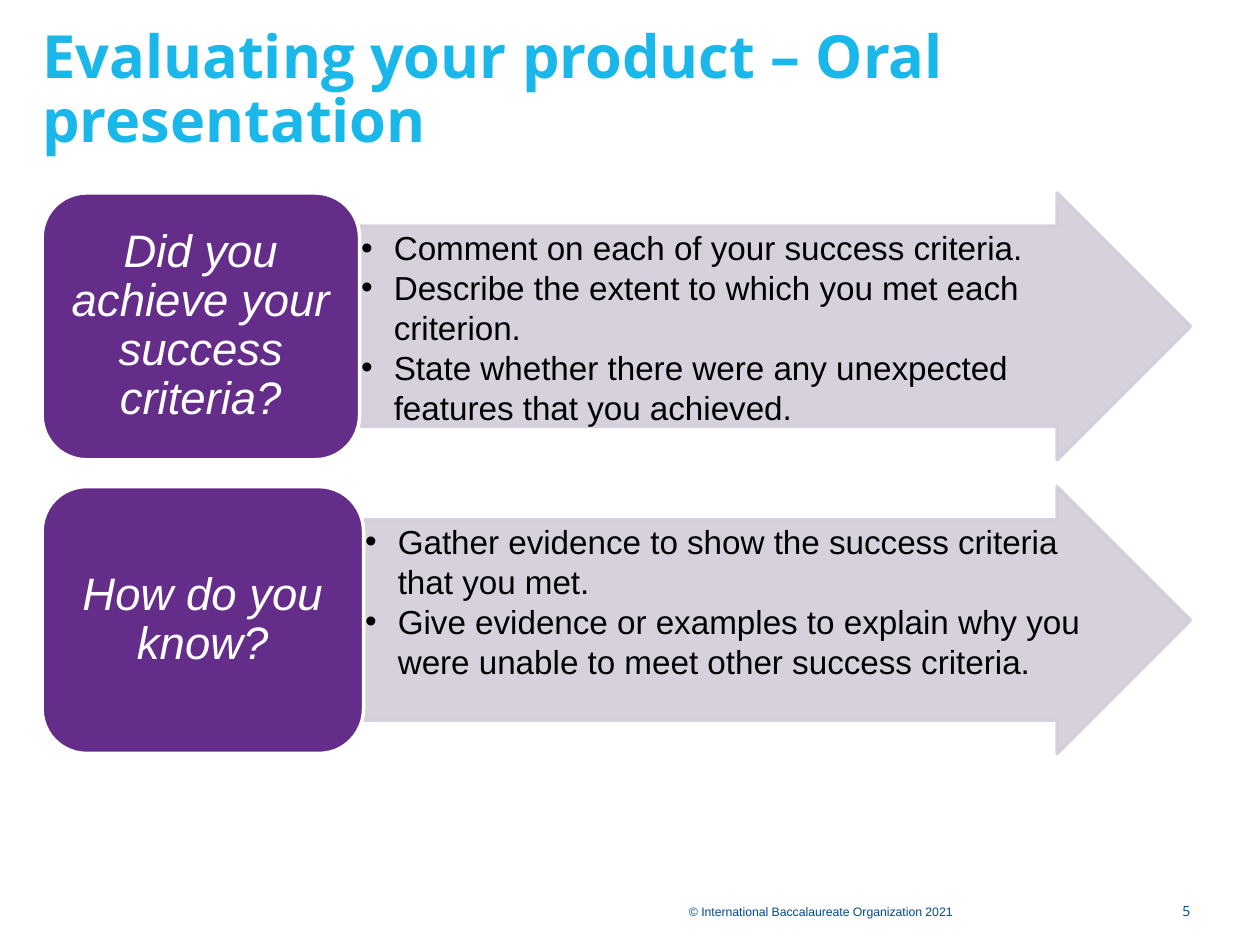
from dataclasses import dataclass

from lxml import etree
from pptx import Presentation
from pptx import util as u
from pptx.dml.color import RGBColor
from pptx.enum import shapes, text
from pptx.oxml.ns import qn


@dataclass(frozen=True)
class Theme:
    title: str = "1AB7EA"
    footer: str = "004B8D"
    label_fill: str = "652D8A"
    arrow_fill: str = "D3CDDA"
    light: str = "FFFFFF"
    dark: str = "000000"
    heading_font: str = "Open Sans"
    body_font: str = "Arial"
    title_size: float = 34
    label_size: float = 26
    bullet_size: float = 19
    number_size: float = 8
    footer_size: float = 7


THEME = Theme()
ROWS = [
    ("Did you achieve your success criteria?", 6.4, [
        "Comment on each of your success criteria.",
        "Describe the extent to which you met each criterion.",
        "State whether there were any unexpected features that you achieved.",
    ]),
    ("How do you know?", 6.48, [
        "Gather evidence to show the success criteria that you met.",
        "Give evidence or examples to explain why you were unable to meet "
        "other success criteria.",
    ]),
]


def style(p, font, size, color, bold=False, italic=False):
    for r in p.runs:
        f = r.font
        f.name, f.size, f.bold, f.italic = font, u.Pt(size), bold, italic
        f.color.rgb = RGBColor.from_string(color)


def set_frame(tf, anchor, inset_x=0, inset_y=0):
    tf.word_wrap = True
    tf.auto_size = text.MSO_AUTO_SIZE.NONE
    tf.vertical_anchor = anchor
    tf.margin_left = tf.margin_right = u.Cm(inset_x)
    tf.margin_top = tf.margin_bottom = u.Cm(inset_y)


def add_bullet(p, indent):
    pPr = p._p.get_or_add_pPr()
    pPr.set("marL", str(indent))
    pPr.set("indent", str(-indent))
    etree.SubElement(pPr, qn("a:buFont"), typeface=THEME.body_font)
    etree.SubElement(pPr, qn("a:buChar"), char="•")


def add_block(s, kind, box, fill, line, opacity=None):
    """Add a filled preset shape with a 2 pt outline; opacity in percent."""
    sp = s.shapes.add_shape(kind, *map(u.Cm, box))
    sp.shadow.inherit = False
    sp.fill.solid()
    sp.fill.fore_color.rgb = RGBColor.from_string(fill)
    sp.line.color.rgb = RGBColor.from_string(line)
    sp.line.width = u.Pt(2)
    if opacity:
        for clr in sp._element.spPr.iter(qn("a:srgbClr")):
            etree.SubElement(clr, qn("a:alpha"), val=str(opacity * 1000))
    return sp


def add_title(s, box, words):
    sp = s.shapes.title
    sp.left, sp.top, sp.width, sp.height = map(u.Cm, box)
    tf = sp.text_frame
    tf.text = words
    set_frame(tf, text.MSO_ANCHOR.BOTTOM)
    p = tf.paragraphs[0]
    p.alignment = text.PP_ALIGN.LEFT
    p.line_spacing = 0.9
    style(p, THEME.heading_font, THEME.title_size, THEME.title, bold=True)


def add_arrow(s, box, points):
    sp = add_block(s, shapes.MSO_SHAPE.RIGHT_ARROW, box,
                   THEME.arrow_fill, THEME.arrow_fill, opacity=90)
    sp.adjustments[0], sp.adjustments[1] = 0.75, 0.5
    tf = sp.text_frame
    tf.text = "\n".join(points)
    set_frame(tf, text.MSO_ANCHOR.TOP, 0.03, 0.03)
    for p in tf.paragraphs:
        p.alignment = text.PP_ALIGN.LEFT
        add_bullet(p, u.Cm(0.66))
        style(p, THEME.body_font, THEME.bullet_size, THEME.dark)


def add_label(s, box, words):
    sp = add_block(s, shapes.MSO_SHAPE.ROUNDED_RECTANGLE, box,
                   THEME.label_fill, THEME.light)
    tf = sp.text_frame
    tf.text = words
    set_frame(tf, text.MSO_ANCHOR.MIDDLE, 0.28, 0.13)
    p = tf.paragraphs[0]
    p.alignment = text.PP_ALIGN.CENTER
    p.line_spacing = 0.9
    style(p, THEME.body_font, THEME.label_size, THEME.light, italic=True)


def add_question_row(s, box, label_width, question, points):
    left, top, width, height = box
    add_arrow(s, (left + label_width, top, width - label_width, height), points)
    add_label(s, (left, top, label_width, height), question)


def add_small_text(s, box, words, font, size, align, spacing):
    tf = s.shapes.add_textbox(*map(u.Cm, box)).text_frame
    tf.text = words
    set_frame(tf, text.MSO_ANCHOR.TOP)
    p = tf.paragraphs[0]
    p.alignment, p.line_spacing = align, spacing
    style(p, font, size, THEME.footer)


def add_footer(s, top):
    add_small_text(s, (13.89, top, 6.78, 0.33),
                   "© International Baccalaureate Organization 2021",
                   THEME.body_font, THEME.footer_size,
                   text.PP_ALIGN.LEFT, 1.43)
    add_small_text(s, (23.29, top, 0.71, 0.41), "5", THEME.heading_font,
                   THEME.number_size, text.PP_ALIGN.RIGHT, 1.25)


def main():
    prs = Presentation()
    prs.slide_width, prs.slide_height = u.Cm(25.4), u.Cm(19.05)
    s = prs.slides.add_slide(prs.slide_layouts[5])
    left, width, row_height, row_gap = 0.85, 23.15, 5.38, 0.54
    add_title(s, (left, 0.89, width, 2.24), "Evaluating your product – Oral presentation")
    for i, (question, label_width, points) in enumerate(ROWS):
        box = (left, 3.89 + i * (row_height + row_gap), width, row_height)
        add_question_row(s, box, label_width, question, points)
    add_footer(s, 18.11)
    prs.save("out.pptx")


if __name__ == "__main__":
    main()
